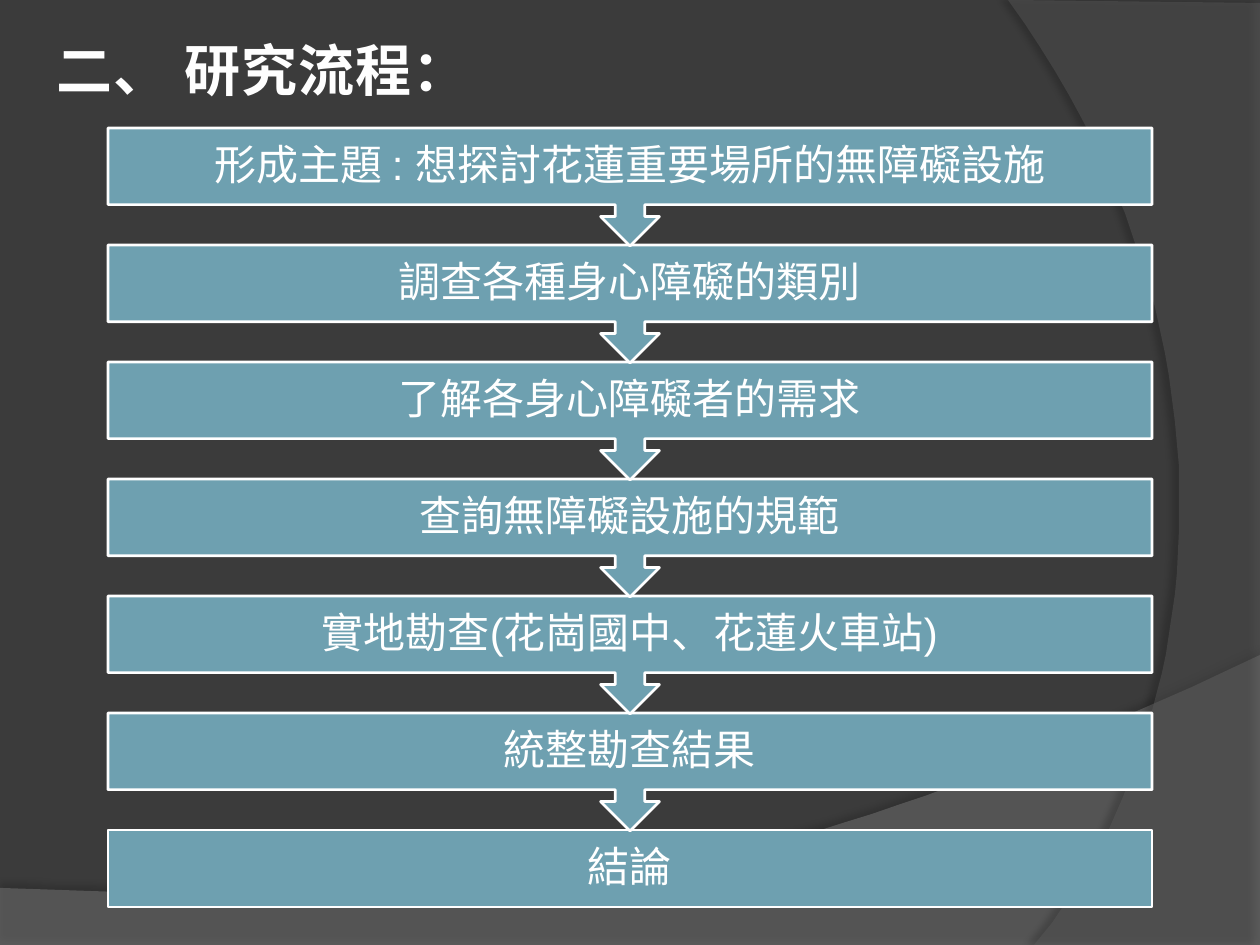
from lxml.etree import SubElement
from pptx import Presentation
from pptx.dml.color import RGBColor
from pptx.enum.shapes import MSO_SHAPE
from pptx.enum.text import MSO_ANCHOR, MSO_AUTO_SIZE, PP_ALIGN
from pptx.oxml.ns import qn
from pptx.util import Emu, Pt

SCALE = 914400 / 126  # EMU per px
LEFT, TOP, WIDE, BOX, TALL, PITCH = 108, 128, 1044, 77, 118, 117
STEPS = [
    "形成主題 : 想探討花蓮重要場所的無障礙設施",
    "調查各種身心障礙的類別",
    "了解各身心障礙者的需求",
    "查詢無障礙設施的規範",
    "實地勘查(花崗國中、花蓮火車站)",
    "統整勘查結果",
    "結論",
]


def px(num):
    return Emu(round(num * SCALE))


def color(code):
    return RGBColor.from_string(code)


def paint(parent, code, alpha=None):
    """Add an RGB colour, with opacity in percent, to an XML node."""
    node = SubElement(parent, qn("a:srgbClr"), val=code)
    if alpha is not None:
        SubElement(node, qn("a:alpha"), val=str(alpha * 1000))


def add_shadow(effects, alpha, blur, dist, angle):
    node = SubElement(effects, qn("a:outerShdw"), blurRad=str(Pt(blur)),
                      dist=str(Pt(dist)), dir=str(angle * 60000),
                      algn="ctr", rotWithShape="0")
    paint(node, "000000", alpha)


def curve(start, one, two, end, count=48):
    """Points along a cubic curve, both ends included."""
    points = []
    for i in range(count + 1):
        t = i / count
        u = 1 - t
        points.append(tuple(
            u**3 * a + 3 * u * u * t * b + 3 * u * t * t * c + t**3 * d
            for a, b, c, d in zip(start, one, two, end)))
    return points


def add_swoosh(slide, points, fill, alpha, shade):
    pen = slide.shapes.build_freeform(*points[0], scale=SCALE)
    pen.add_line_segments(points[1:], close=True)
    shape = pen.convert_to_shape()
    shape.fill.solid()
    shape.fill.fore_color.rgb = color(fill)
    tint = shape.fill._xPr.find(".//" + qn("a:srgbClr"))
    SubElement(tint, qn("a:alpha"), val=str(alpha * 1000))
    shape.line.fill.background()
    shape.shadow.inherit = False
    add_shadow(shape._element.spPr.find(qn("a:effectLst")), *shade)


def add_text(slide, text, x, y, w, h, size=24, ink="FFFFFF", bold=False,
             wrap=True, inset=None, anchor=MSO_ANCHOR.TOP, spacing=None):
    box = slide.shapes.add_textbox(px(x), px(y), px(w), px(h))
    frame = box.text_frame
    frame.word_wrap = wrap
    frame.vertical_anchor = anchor
    if not wrap:
        frame.auto_size = MSO_AUTO_SIZE.SHAPE_TO_FIT_TEXT
    if inset is not None:
        frame.margin_left = frame.margin_right = px(inset)
        frame.margin_top = frame.margin_bottom = px(inset)
    para = frame.paragraphs[0]
    para.alignment = PP_ALIGN.CENTER
    para.line_spacing = spacing
    run = para.add_run()
    run.text = text
    font = run.font
    font.size, font.bold, font.name = Pt(size), bold, "Arial"
    font.color.rgb = color(ink)
    return run


def add_title(slide, text):
    run = add_text(slide, text, 39, 29, 461, 81, size=32, ink="FEFEFE",
                   bold=True, wrap=False)
    props = run._r.get_or_add_rPr()
    props.set("spc", "50")
    # Schema order: outline, fill, effects, font
    line = SubElement(props, qn("a:ln"), w=str(Pt(1)))
    paint(SubElement(line, qn("a:solidFill")), "717881")
    props.insert(0, line)
    effects = SubElement(props, qn("a:effectLst"))
    add_shadow(effects, 40, 3, 2, 45)
    props.insert(2, effects)


def add_step(slide, text, top, last):
    kind = MSO_SHAPE.RECTANGLE if last else MSO_SHAPE.UP_ARROW_CALLOUT
    shape = slide.shapes.add_shape(kind, px(LEFT), px(top), px(WIDE),
                                   px(BOX if last else TALL))
    shape.rotation = 0 if last else 180
    shape.shadow.inherit = False
    shape.fill.solid()
    shape.fill.fore_color.rgb = color("6EA0B0")
    shape.line.color.rgb = color("FFFFFF")
    shape.line.width = Pt(1.5)
    add_text(slide, text, LEFT, top, WIDE, BOX, inset=24,
             anchor=MSO_ANCHOR.MIDDLE, spacing=0.9)


def main():
    deck = Presentation()
    deck.slide_width, deck.slide_height = px(1260), px(945)
    slide = deck.slides.add_slide(deck.slide_layouts[6])

    # Background and its two curved panels
    back = slide.background.fill
    back.solid()
    back.fore_color.rgb = color("3B3B3B")
    floor = [(0, 946), (1260, 946)] + curve(
        (1260, 655), (704, 919), (493, 906), (0, 888))
    add_swoosh(slide, floor, "7F7F7F", 45, (35, 4, 3.5, 270))
    side = [(1260, 3), (1260, 945)] + curve(
        (1034, 945), (1178, 780), (1283, 378), (1008, 0))
    add_swoosh(slide, side, "5E5E5E", 40, (45, 4, 4, 180))

    add_title(slide, "二、 研究流程： ")

    # Steps from the bottom up, so each arrow lies over the next box
    final = len(STEPS) - 1
    for i in range(final, -1, -1):
        add_step(slide, STEPS[i], TOP + i * PITCH, i == final)

    deck.save("out.pptx")


if __name__ == "__main__":
    main()
